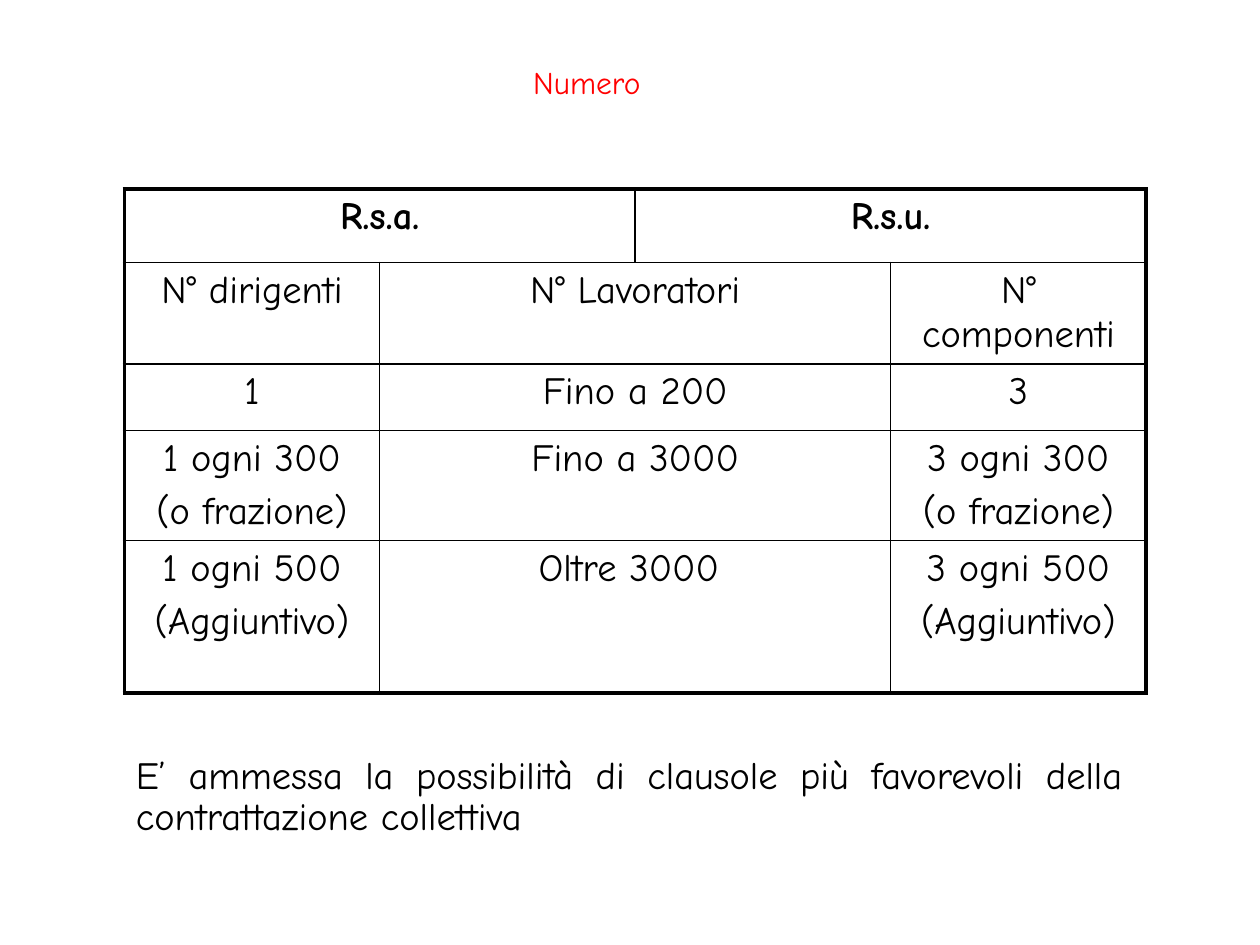
"""Build the slide that compares the number of R.s.a. and R.s.u. representatives."""
from dataclasses import dataclass

from lxml.etree import SubElement
from pptx import Presentation
from pptx.dml.color import RGBColor
from pptx.enum.text import MSO_ANCHOR, MSO_AUTO_SIZE, PP_ALIGN
from pptx.oxml.ns import qn
from pptx.table import Table, _Cell
from pptx.text.text import TextFrame
from pptx.util import Pt

FONT = "Comic Neue"
BLACK = RGBColor(0, 0, 0)
RED = RGBColor(255, 0, 0)
OUTER_LINE = Pt(2.25)
INNER_LINE = Pt(1)
COLUMN_COUNT = 4
COLUMN_WIDTH = Pt(146)
ROW_HEIGHTS = [Pt(height) for height in (42, 58, 38, 63, 87)]


@dataclass
class Entry:
    text: str
    span: int = 1
    bold: bool = False


def body_row(leaders: str, workers: str, members: str) -> list[Entry]:
    return [Entry(leaders), Entry(workers, span=2), Entry(members)]


ROWS = [
    [Entry("R.s.a.", span=2, bold=True), Entry("R.s.u.", span=2, bold=True)],
    body_row("N° dirigenti", "N° Lavoratori", "N° componenti"),
    body_row("1", "Fino a 200", "3"),
    body_row("1 ogni 300\n(o frazione)", "Fino a 3000", "3 ogni 300\n(o frazione)"),
    body_row("1 ogni 500\n(Aggiuntivo)", "Oltre 3000 ", "3 ogni 500\n(Aggiuntivo)"),
]


def write_text(frame: TextFrame, text: str, *, size=Pt(22), color=BLACK, bold=False,
               align=PP_ALIGN.LEFT, line_spacing=1.0, space_before=Pt(0)) -> None:
    frame.text = text
    for para in frame.paragraphs:
        para.alignment = align
        para.line_spacing = line_spacing
        para.space_before = space_before
        for span in para.runs:
            font = span.font
            font.name, font.size, font.bold = FONT, size, bold
            font.color.rgb = color


def set_borders(cell: _Cell, outer_edges: dict[str, bool]) -> None:
    properties = cell._tc.get_or_add_tcPr()
    for edge, is_outer in outer_edges.items():
        width = OUTER_LINE if is_outer else INNER_LINE
        line = SubElement(properties, qn(f"a:{edge}"), w=str(int(width)))
        fill = SubElement(line, qn("a:solidFill"))
        SubElement(fill, qn("a:srgbClr"), val=str(BLACK))


def fill_row(table: Table, row: int, entries: list[Entry]) -> None:
    column = 0
    for entry in entries:
        end = column + entry.span
        first = table.cell(row, column)
        if entry.span > 1:
            first.merge(table.cell(row, end - 1))
        for position in range(column, end):
            cell = table.cell(row, position)
            set_borders(cell, {"lnL": column == 0, "lnR": end == COLUMN_COUNT,
                               "lnT": row == 0, "lnB": row == len(ROWS) - 1})
            cell.fill.background()
        write_text(first.text_frame, entry.text, bold=entry.bold,
                   align=PP_ALIGN.CENTER, space_before=Pt(5))
        column = end


def add_numbers_table(slide) -> None:
    table = slide.shapes.add_table(len(ROWS), COLUMN_COUNT, Pt(71), Pt(108),
                                   COLUMN_WIDTH * COLUMN_COUNT, sum(ROW_HEIGHTS)).table
    table.first_row = table.horz_banding = False
    for column in table.columns:
        column.width = COLUMN_WIDTH
    for row, (height, entries) in enumerate(zip(ROW_HEIGHTS, ROWS)):
        table.rows[row].height = height
        fill_row(table, row, entries)


def add_title(slide) -> None:
    title = slide.shapes.title
    title.left, title.top, title.width, title.height = Pt(297.5), Pt(32.5), Pt(131), Pt(45)
    frame = title.text_frame
    frame.auto_size = MSO_AUTO_SIZE.NONE
    frame.vertical_anchor = MSO_ANCHOR.TOP
    write_text(frame, "Numero", size=Pt(18), color=RED)


def add_note(slide) -> None:
    box = slide.shapes.add_textbox(Pt(70.5), Pt(428.5), Pt(578), Pt(55))
    box.text_frame.word_wrap = True
    write_text(box.text_frame,
               "E’ ammessa la possibilità di clausole più favorevoli della "
               "contrattazione collettiva",
               align=PP_ALIGN.JUSTIFY, line_spacing=0.9)


def main() -> None:
    deck = Presentation()
    deck.slide_width, deck.slide_height = Pt(720), Pt(540)
    slide = deck.slides.add_slide(deck.slide_layouts[5])
    add_title(slide)
    add_numbers_table(slide)
    add_note(slide)
    deck.save("out.pptx")


if __name__ == "__main__":
    main()
